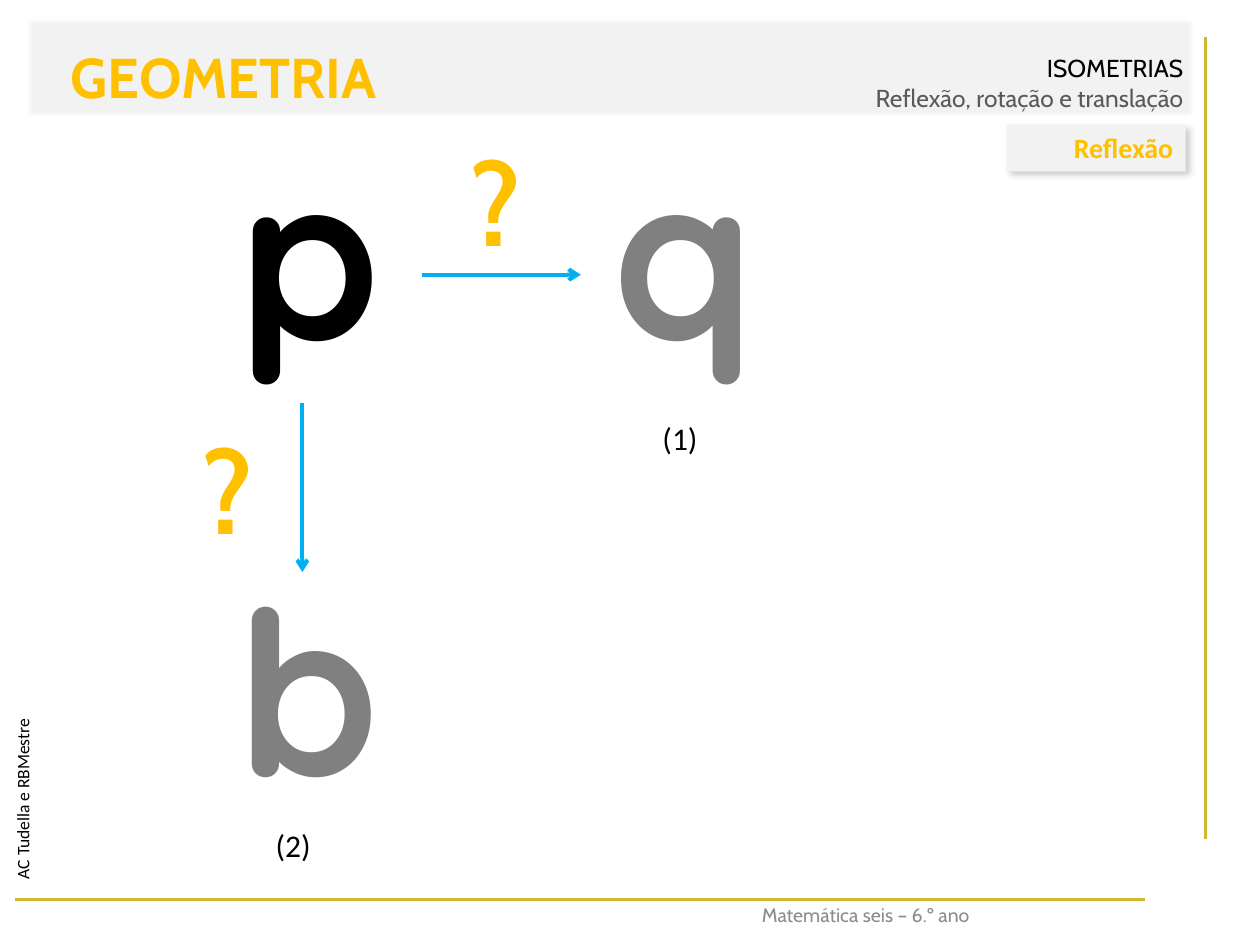
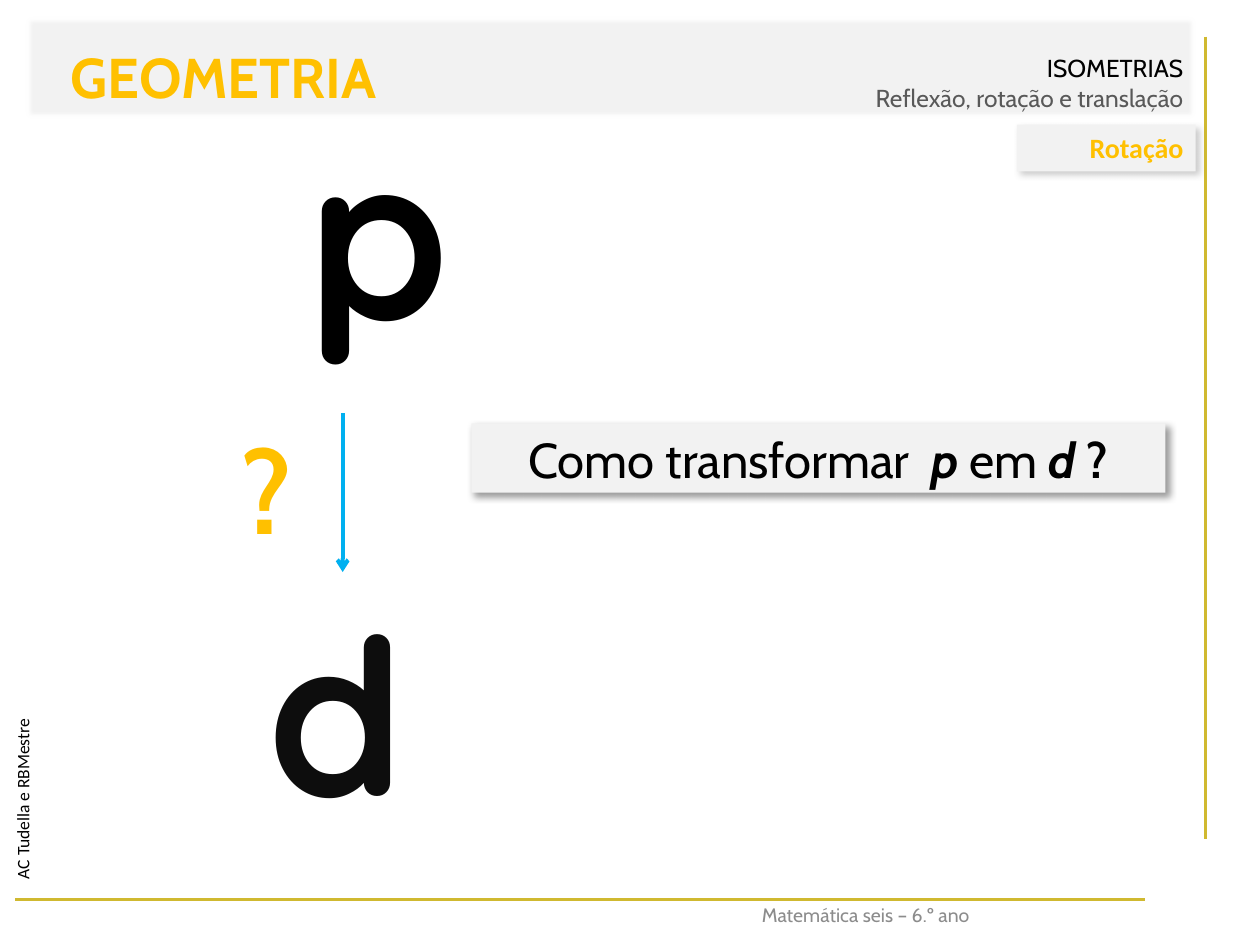
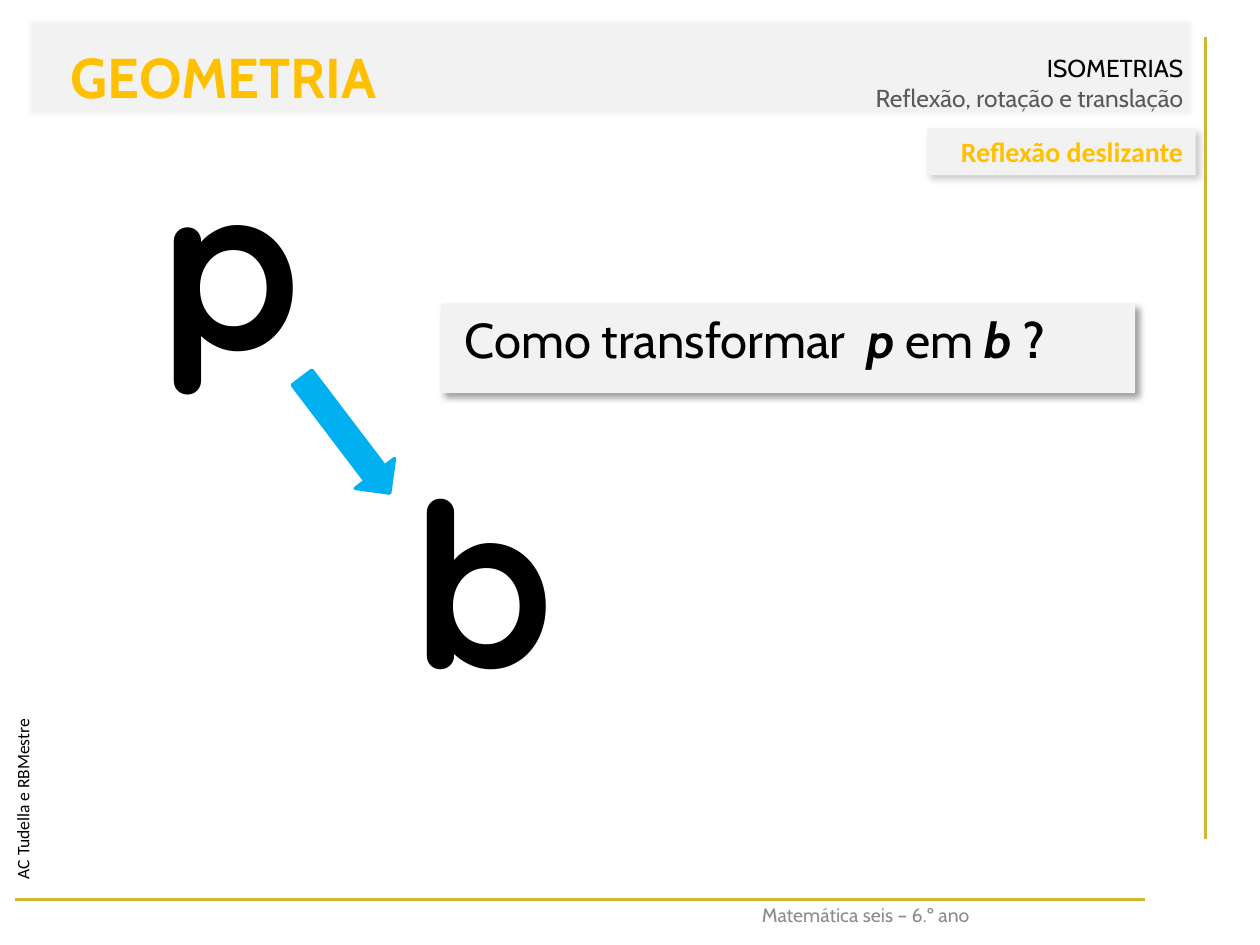
from lxml import etree
from pptx import Presentation
from pptx.dml.color import RGBColor
from pptx.enum.shapes import MSO_CONNECTOR, MSO_SHAPE
from pptx.enum.text import MSO_ANCHOR, PP_ALIGN
from pptx.oxml.ns import qn
from pptx.util import Inches, Pt

LEFT, CENTER, RIGHT = PP_ALIGN.LEFT, PP_ALIGN.CENTER, PP_ALIGN.RIGHT
TOP, BOTTOM = MSO_ANCHOR.TOP, MSO_ANCHOR.BOTTOM
STRAIGHT = MSO_CONNECTOR.STRAIGHT
RECTANGLE, LEFT_ARROW = MSO_SHAPE.RECTANGLE, MSO_SHAPE.LEFT_ARROW

COLORS = {
    "rule": "D0B930",
    "accent": "FFC000",
    "panel": "F2F2F2",
    "arrow": "00B0F0",
    "black": "000000",
    "dark": "0D0D0D",
    "subtitle": "595959",
    "image": "808080",
    "footer": "8C8C8C",
}
HEADING, BODY, LETTER = "Cabin", "Calibri", "Quicksand"
EMU_PER_POINT = 12700


def color(name):
    return RGBColor.from_string(COLORS[name])


def write(shape, lines, font, size, align=LEFT, anchor=TOP):
    frame = shape.text_frame
    frame.word_wrap = True
    frame.vertical_anchor = anchor
    for index, spans in enumerate(lines):
        para = frame.paragraphs[0] if index == 0 else frame.add_paragraph()
        para.alignment = align
        for text, tone, bold, italic in spans:
            span = para.add_run()
            span.text = text
            span.font.name = font
            span.font.size = Pt(size)
            span.font.bold = bold
            span.font.italic = italic
            span.font.color.rgb = color(tone)
    return frame


def add_text(page, box, text, font, size, tone="black", bold=False, align=LEFT):
    shape = page.shapes.add_textbox(*map(Inches, box))
    write(shape, [[(text, tone, bold, False)]], font, size, align)
    return shape


def add_line(page, start, end, tone, width, arrow=False):
    line = page.shapes.add_connector(STRAIGHT, *map(Inches, start + end))
    line.line.color.rgb = color(tone)
    line.line.width = Pt(width)
    if arrow:
        etree.SubElement(line.line._get_or_add_ln(), qn("a:tailEnd"), type="arrow")
    etree.SubElement(line._element.spPr, qn("a:effectLst"))


def add_panel(page, box):
    panel = page.shapes.add_shape(RECTANGLE, *map(Inches, box))
    panel.fill.solid()
    panel.fill.fore_color.rgb = color("panel")
    panel.line.fill.background()
    panel.shadow.inherit = False
    return panel


def add_effect(shape, tag, **settings):
    effects = shape._element.spPr.find(qn("a:effectLst"))
    return etree.SubElement(effects, qn(tag), **settings)


def add_shadow(shape, tone):
    shadow = add_effect(
        shape, "a:outerShdw", blurRad=str(4 * EMU_PER_POINT),
        dist=str(3 * EMU_PER_POINT), dir="2700000", algn="tl", rotWithShape="0")
    shade = etree.SubElement(shadow, qn("a:srgbClr"), val=COLORS[tone])
    etree.SubElement(shade, qn("a:alpha"), val="40000")


def add_frame(page):
    add_line(page, (9.57, 0.29), (9.57, 6.66), "rule", 1.5)
    add_line(page, (0.12, 7.14), (9.09, 7.14), "rule", 1.5)
    footer = add_text(page, (4.61, 7.14, 4.52, 0.27), "Matemática seis – 6.º ano",
                      HEADING, 11.1, "footer", align=CENTER)
    footer.text_frame.paragraphs[0].line_spacing = 0.9
    authors = add_text(page, (-1.34, 5.29, 3.17, 0.4), "AC Tudella e RBMestre", BODY, 10)
    authors.rotation = 270


def add_header(page, box):
    left, top, width, height = box
    band = add_panel(page, box)
    add_effect(band, "a:softEdge", rad=str(2.5 * EMU_PER_POINT).split(".")[0])
    lines = [[("ISOMETRIAS", "black", False, False)],
             [("Reflexão, rotação e translação", "subtitle", False, False)]]
    write(band, lines, HEADING, 14, RIGHT, BOTTOM)
    add_text(page, (left + 0.08, top + 0.16, 2.99, 0.64), "GEOMETRIA",
             HEADING, 32, "accent", True, CENTER)


def add_tag(page, box, text):
    tag = add_panel(page, box)
    add_shadow(tag, "image")
    write(tag, [[(text, "accent", True, False)]], BODY, 16, RIGHT)


def add_question(page, box, target, ending, align):
    panel = add_panel(page, box)
    add_shadow(panel, "black")
    spans = [("Como transformar  ", "black", False, False),
             ("p", "black", True, True),
             (" em ", "black", False, False),
             (target, "black", True, True),
             (ending, "black", True, False)]
    frame = write(panel, [spans], HEADING, 28, align)
    frame.paragraphs[0]._p.get_or_add_pPr().set("marL", str(Inches(0.09)))


def add_letter(page, box, letter, tone="black", size=130):
    add_text(page, box, letter, LETTER, size, tone, True, CENTER)


def add_doubt(page, left, top):
    add_text(page, (left, top, 1.02, 1.21), "?", HEADING, 66, "accent", True, CENTER)


def add_slide_arrow(page, box, angle):
    arrow = page.shapes.add_shape(LEFT_ARROW, *map(Inches, box))
    arrow.rotation = angle
    arrow.fill.solid()
    arrow.fill.fore_color.rgb = color("arrow")
    arrow.line.color.rgb = color("arrow")
    arrow.line.width = Pt(2)
    arrow.shadow.inherit = False


def start_page(deck, tag_box, tag):
    page = deck.slides.add_slide(deck.slide_layouts[6])
    add_frame(page)
    add_header(page, (0.2, 0.13, 9.29, 0.81))
    add_tag(page, tag_box, tag)
    return page


def build_reflection(deck):
    page = start_page(deck, (7.99, 0.99, 1.42, 0.37), "Reflexão")
    add_letter(page, (1.73, 0.84, 1.45, 1.76), "p")
    add_letter(page, (4.53, 0.84, 1.81, 2.29), "q", "image")
    add_letter(page, (1.54, 4.3, 1.81, 2.29), "b", "image")
    add_line(page, (3.35, 2.18), (4.61, 2.18), "arrow", 2.25, True)
    add_line(page, (2.4, 3.2), (2.4, 4.54), "arrow", 2.25, True)
    add_text(page, (5.16, 3.28, 0.63, 0.4), "(1)", BODY, 18)
    add_text(page, (2.09, 6.51, 0.63, 0.4), "(2)", BODY, 18)
    add_doubt(page, 1.3, 3.28)
    add_doubt(page, 3.43, 0.99)


def build_rotation(deck):
    page = start_page(deck, (8.07, 0.99, 1.42, 0.37), "Rotação")
    add_letter(page, (2.28, 0.68, 1.45, 1.76), "p")
    add_letter(page, (1.77, 4.54, 1.81, 2.2), "d", "dark", 125)
    add_line(page, (2.72, 3.28), (2.72, 4.54), "arrow", 2.25, True)
    add_question(page, (3.74, 3.36, 5.51, 0.55), "d", " ? ", CENTER)
    add_doubt(page, 1.61, 3.28)


def build_glide_reflection(deck):
    page = start_page(deck, (7.36, 1.02, 2.13, 0.37), "Reflexão deslizante")
    add_letter(page, (1.1, 0.92, 1.45, 1.76), "p")
    add_letter(page, (3.11, 3.44, 1.45, 2.29), "b")
    add_slide_arrow(page, (2.17, 3.26, 1.15, 0.39), 232.8)
    add_question(page, (3.5, 2.41, 5.51, 0.71), "b", " ?", LEFT)


def main():
    deck = Presentation()
    deck.slide_width, deck.slide_height = Inches(10), Inches(7.5)
    build_reflection(deck)
    build_rotation(deck)
    build_glide_reflection(deck)
    deck.save("out.pptx")


if __name__ == "__main__":
    main()
